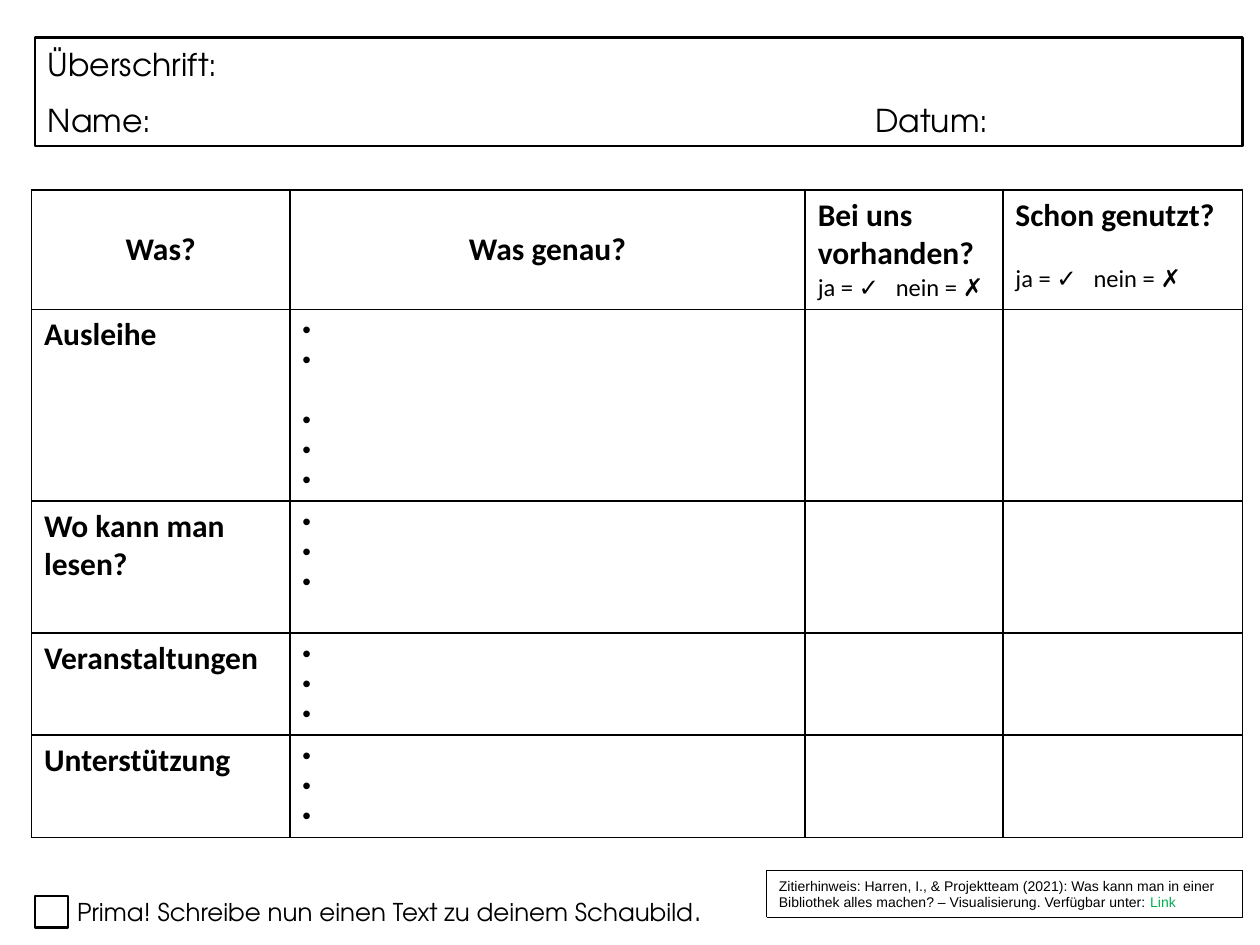
from lxml import etree
from pptx import Presentation
from pptx.dml.color import RGBColor
from pptx.enum import dml, shapes, text
from pptx.oxml import ns
from pptx.util import Pt

COLORS = {"ink": "000000", "link": "00B050"}
DISPLAY, BODY, SMALL = "TeX Gyre Adventor", "Calibri", "Arial"
LINE_GAP = 17.1
COLUMNS = [147.6, 294.5, 113, 136.8]
ROWS = [68, 109.7, 75.4, 58.3, 58.3]
ANSWER_KEY = "ja = ✓\tnein = ✗"
TOPICS = [
    ("Ausleihe", 5),
    ("Wo kann man lesen?", 3),
    ("Veranstaltungen", 3),
    ("Unterstützung", 3),
]


def color(name):
    return RGBColor.from_string(COLORS[name])


def add_span(para, words, size, face, bold=False, ink="ink"):
    span = para.add_run()
    span.text = words
    span.font.size = Pt(size)
    span.font.name = face
    span.font.bold = bold
    span.font.color.rgb = color(ink)


def add_tab(para, position):
    stops = etree.SubElement(para._p.get_or_add_pPr(), ns.qn("a:tabLst"))
    etree.SubElement(stops, ns.qn("a:tab"), pos=str(Pt(position)), algn="l")


def add_bullet(para):
    properties = para._p.get_or_add_pPr()
    properties.set("marL", str(Pt(14)))
    properties.set("indent", str(-Pt(14)))
    etree.SubElement(properties, ns.qn("a:buFont"), typeface="Arial")
    etree.SubElement(properties, ns.qn("a:buChar"), char="•")


def place(shape, left, top, width, height):
    shape.left, shape.top = Pt(left), Pt(top)
    shape.width, shape.height = Pt(width), Pt(height)


def outline(shape, width):
    shape.fill.background()
    shape.line.color.rgb = color("ink")
    shape.line.width = Pt(width)


def add_box(page, left, top, width, height, line_width):
    box = page.shapes.add_shape(
        shapes.MSO_SHAPE.RECTANGLE, Pt(left), Pt(top), Pt(width), Pt(height)
    )
    box.shadow.inherit = False
    outline(box, line_width)
    return box


def add_header(page, left, top, width, height):
    box = page.shapes.title
    place(box, left, top, width, height)
    outline(box, 1.5)
    frame = box.text_frame
    frame.auto_size = text.MSO_AUTO_SIZE.NONE
    frame.vertical_anchor = text.MSO_ANCHOR.MIDDLE
    heading = frame.paragraphs[0]
    heading.alignment = text.PP_ALIGN.LEFT
    add_span(heading, "Überschrift:", 18, DISPLAY)
    details = frame.add_paragraph()
    add_tab(details, 473)
    details.alignment = text.PP_ALIGN.LEFT
    details.line_spacing = 1.5
    add_span(details, "Name:\tDatum:", 18, DISPLAY)


def add_borders(cell):
    properties = cell._tc.get_or_add_tcPr()
    for index, side in enumerate(("lnL", "lnR", "lnT", "lnB")):
        border = etree.Element(ns.qn(f"a:{side}"), w=str(Pt(1)))
        fill = etree.SubElement(border, ns.qn("a:solidFill"))
        etree.SubElement(fill, ns.qn("a:srgbClr"), val=COLORS["ink"])
        properties.insert(index, border)


def fill_question(cell, question, gap):
    add_span(cell.text_frame.paragraphs[0], question, 18, BODY, bold=True)
    para = cell.text_frame.add_paragraph()
    add_tab(para, 44.6)
    para.space_before = Pt(gap)
    add_span(para, ANSWER_KEY, 14, BODY)


def fill_bullets(cell, count):
    frame = cell.text_frame
    for index in range(count):
        para = frame.add_paragraph() if index else frame.paragraphs[0]
        add_bullet(para)
        add_span(para, " ", 14, BODY)


def add_topic_table(page, left, top):
    frame = page.shapes.add_table(
        len(ROWS), len(COLUMNS), Pt(left), Pt(top), Pt(sum(COLUMNS)), Pt(sum(ROWS))
    )
    table = frame.table
    table.first_row = table.horz_banding = False
    for column, width in zip(table.columns, COLUMNS):
        column.width = Pt(width)
    for row, height in zip(table.rows, ROWS):
        row.height = Pt(height)
    for cell in table.iter_cells():
        cell.fill.background()
        add_borders(cell)
    for index, label in enumerate(("Was?", "Was genau?")):
        cell = table.cell(0, index)
        cell.vertical_anchor = text.MSO_ANCHOR.MIDDLE
        para = cell.text_frame.paragraphs[0]
        para.alignment = text.PP_ALIGN.CENTER
        add_span(para, label, 18, BODY, bold=True)
    fill_question(table.cell(0, 2), "Bei uns vorhanden?", 0)
    fill_question(table.cell(0, 3), "Schon genutzt?", LINE_GAP)
    for row, (topic, count) in enumerate(TOPICS, start=1):
        para = table.cell(row, 0).text_frame.paragraphs[0]
        add_span(para, topic, 18, BODY, bold=True)
        fill_bullets(table.cell(row, 1), count)
    table.cell(1, 1).text_frame.paragraphs[1].space_after = Pt(LINE_GAP)


def add_task(page, left, top, width, height):
    add_box(page, left, top + 5, 19, 18, 1.5)
    box = page.shapes.add_textbox(Pt(left + 17), Pt(top), Pt(width - 17), Pt(height))
    box.text_frame.word_wrap = True
    para = box.text_frame.paragraphs[0]
    add_span(para, "Prima! Schreibe nun einen Text zu deinem Schaubild", 14, DISPLAY)
    add_span(para, ".", 16, DISPLAY)


def add_citation(page, left, top, width, height):
    box = add_box(page, left, top, width, height, 0.25)
    box.line.dash_style = dml.MSO_LINE.ROUND_DOT
    frame = box.text_frame
    frame.word_wrap = True
    frame.vertical_anchor = text.MSO_ANCHOR.MIDDLE
    para = frame.paragraphs[0]
    para.alignment = text.PP_ALIGN.LEFT
    add_span(
        para,
        "Zitierhinweis: Harren, I., & Projektteam (2021): Was kann man in einer "
        "Bibliothek alles machen? – Visualisierung. Verfügbar unter: ",
        8,
        SMALL,
    )
    add_span(para, "Link", 8, SMALL, ink="link")


def main():
    deck = Presentation()
    deck.slide_width, deck.slide_height = Pt(720), Pt(540)
    page = deck.slides.add_slide(deck.slide_layouts[5])
    add_header(page, 20, 21.5, 690, 62)
    add_topic_table(page, 18, 108.5)
    add_task(page, 20, 507, 443, 29)
    add_citation(page, 438, 497.5, 272, 26.5)
    deck.save("out.pptx")


if __name__ == "__main__":
    main()
